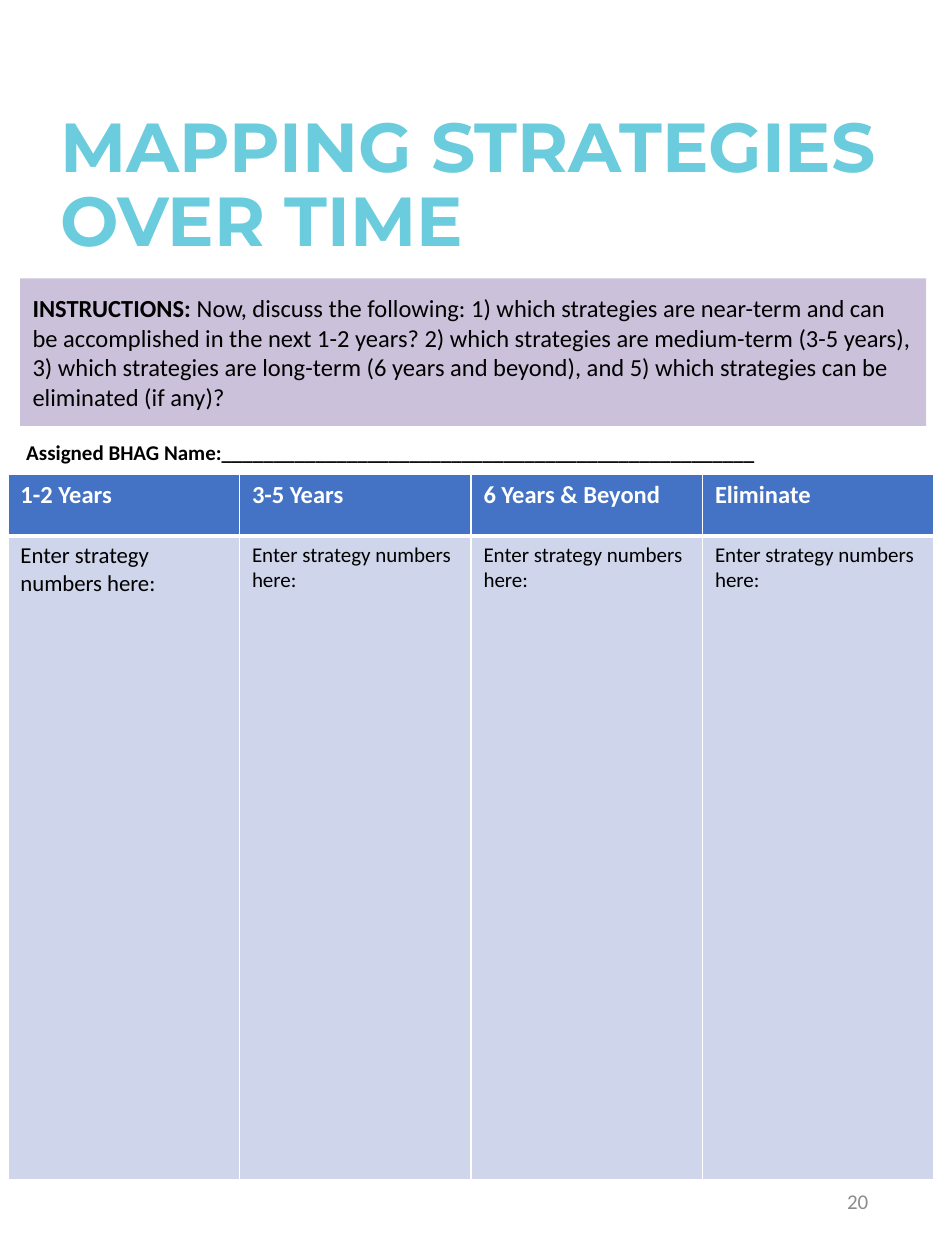
from lxml.etree import SubElement
from pptx import Presentation
from pptx.dml.color import RGBColor
from pptx.enum.shapes import MSO_SHAPE
from pptx.enum.text import MSO_ANCHOR, PP_ALIGN
from pptx.oxml.ns import qn
from pptx.util import Pt

AQUA = RGBColor(0x6A, 0xCC, 0xDD)
LILAC = RGBColor(0xCC, 0xC1, 0xDA)
BLUE = RGBColor(0x44, 0x72, 0xC4)
PALE_BLUE = RGBColor(0xCF, 0xD5, 0xEA)
GREY = RGBColor(0x8C, 0x8C, 0x8C)
BLACK = RGBColor(0, 0, 0)
WHITE = RGBColor(0xFF, 0xFF, 0xFF)


class Worksheet:
    """Holds the text style and the current slide."""

    font = {"name": "Calibri", "size": Pt(12), "bold": False}

    def __init__(self, slide):
        self.slide = slide

    def add_words(self, frame, spans, color=BLACK, para_format=None, **font):
        """Fill one paragraph from (text, font changes) pairs."""
        para = frame.paragraphs[0]
        for name, value in (para_format or {}).items():
            setattr(para, name, value)
        for text, changes in spans:
            span = para.add_run()
            span.text = text
            for name, value in {**self.font, **font, **changes}.items():
                setattr(span.font, name, value)
            span.font.color.rgb = color

    def text(self, area, words, anchor=MSO_ANCHOR.TOP, **style):
        box = self.slide.shapes.add_textbox(*map(Pt, area))
        box.text_frame.word_wrap = True
        box.text_frame.vertical_anchor = anchor
        self.add_words(box.text_frame, [(words, {})], **style)

    def panel(self, area, fill, spans, **style):
        box = self.slide.shapes.add_shape(MSO_SHAPE.RECTANGLE, *map(Pt, area))
        box.shadow.inherit = False
        box.fill.solid()
        box.fill.fore_color.rgb = fill
        box.line.fill.background()
        box.text_frame.vertical_anchor = MSO_ANCHOR.MIDDLE
        self.add_words(box.text_frame, spans, **style)

    def borders(self, cell, widths):
        properties = cell._tc.get_or_add_tcPr()
        for side, width in widths.items():
            line = SubElement(properties, qn(f"a:ln{side}"), w=str(Pt(width)))
            fill = SubElement(line, qn("a:solidFill"))
            SubElement(fill, qn("a:srgbClr"), val=str(WHITE))

    def table(self, area, heights, rows):
        """Each row is (fill, text color, bottom border, [(text, font changes)])."""
        columns = len(rows[0][3])
        shape = self.slide.shapes.add_table(len(rows), columns, *map(Pt, area))
        table = shape.table
        for column in table.columns:
            column.width = Pt(area[2] / columns)
        for index, (fill, color, bottom, spans) in enumerate(rows):
            table.rows[index].height = Pt(heights[index])
            for cell, span in zip(table.rows[index].cells, spans):
                top = rows[index - 1][2] if index else 1
                self.borders(cell, {"L": 1, "R": 1, "T": top, "B": bottom})
                cell.fill.solid()
                cell.fill.fore_color.rgb = fill
                self.add_words(cell.text_frame, [span], color)


def main():
    deck = Presentation()
    deck.slide_width, deck.slide_height = Pt(540), Pt(720)
    page = Worksheet(deck.slides.add_slide(deck.slide_layouts[6]))

    # Title and page number
    page.text((27.36, 46.8, 486, 120.24), "MAPPING STRATEGIES OVER TIME",
              MSO_ANCHOR.MIDDLE, color=AQUA, para_format={"line_spacing": 0.9},
              name="Montserrat", size=Pt(39.6), bold=True)
    page.text((381.6, 667.44, 121.68, 38.16), "20", MSO_ANCHOR.MIDDLE,
              color=GREY, para_format={"alignment": PP_ALIGN.RIGHT})

    # Strategy table
    heading = {"size": Pt(14), "bold": True}
    periods = ["1-2 Years", "3-5 Years", "6 Years & Beyond", "Eliminate"]
    prompt = "Enter strategy numbers here:"
    page.table((4.5, 271, 529.2, 403.2), (35.28, 367.92), [
        (BLUE, WHITE, 3, [(period, heading) for period in periods]),
        (PALE_BLUE, BLACK, 1, [(prompt, {"size": Pt(size)}) for size in (13, 12, 12, 12)]),
    ])

    # Name line and instructions
    spaced = {"space_after": Pt(6), "alignment": PP_ALIGN.LEFT}
    page.text((7.92, 247.68, 524.88, 21.6), "Assigned BHAG Name:" + "_" * 51,
              para_format=spaced, bold=True)
    page.panel((11.52, 159.12, 517.68, 84.24), LILAC, [
        ("INSTRUCTIONS:", {"bold": True}),
        (" Now, discuss the following: 1) which strategies are near-term and can be "
         "accomplished in the next 1-2 years? 2) which strategies are medium-term "
         "(3-5 years), 3) which strategies are long-term (6 years and beyond), and "
         "5) which strategies can be eliminated (if any)?", {}),
    ], para_format=spaced, size=Pt(14))

    deck.save("out.pptx")


if __name__ == "__main__":
    main()
